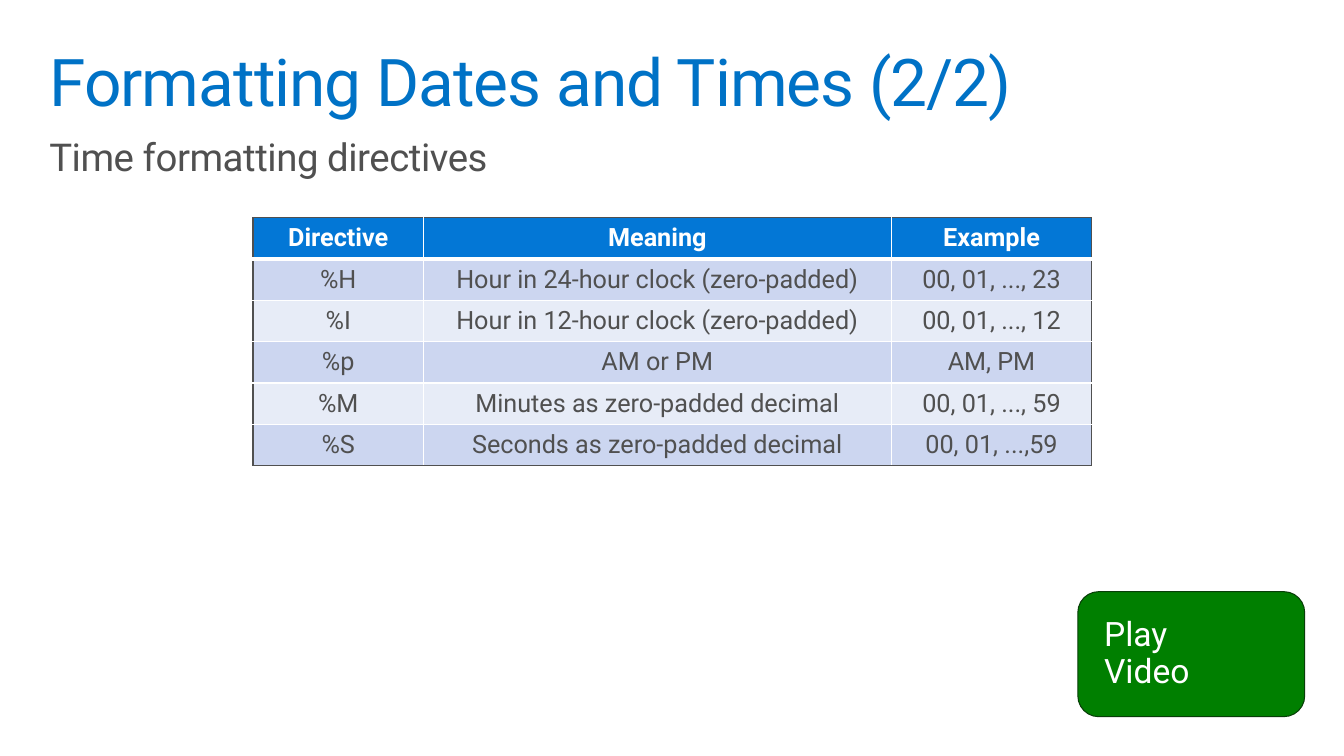
import pptx
import pptx.util
import pptx.dml.color
import pptx.enum.shapes
import pptx.enum.text
import pptx.oxml
import pptx.oxml.ns

Inches, Pt = pptx.util.Inches, pptx.util.Pt
RGBColor = pptx.dml.color.RGBColor
Align, Anchor = pptx.enum.text.PP_ALIGN, pptx.enum.text.MSO_ANCHOR

BLUE = RGBColor(0x00, 0x72, 0xC6)
HEAD = RGBColor(0x03, 0x77, 0xD6)
GRAY = RGBColor(0x50, 0x50, 0x50)
WHITE = RGBColor(0xFF, 0xFF, 0xFF)
DARK = RGBColor(0xCC, 0xD6, 0xF0)
LIGHT = RGBColor(0xE7, 0xEC, 0xF7)
GREEN = RGBColor(0x00, 0x7F, 0x00)
EDGE = RGBColor(0x08, 0x3E, 0x08)

ROWS = [
    ("Directive", "Meaning", "Example"),
    ("%H", "Hour in 24-hour clock (zero-padded)", "00, 01, ..., 23"),
    ("%I", "Hour in 12-hour clock (zero-padded)", "00, 01, ..., 12"),
    ("%p", "AM or PM", "AM, PM"),
    ("%M", "Minutes as zero-padded decimal", "00, 01, ..., 59"),
    ("%S", "Seconds as zero-padded decimal", "00, 01, ...,59"),
]
WIDTHS = (1.69, 4.64, 1.99)
ROW_H = 0.41


class Page:
    font = "Roboto"

    def __init__(self, slide):
        self.slide = slide

    def style(self, para, size, color, bold=False, track=0):
        """Format every run; track is letter spacing in points."""
        for run in para.runs:
            run.font.name = self.font
            run.font.size = Pt(size)
            run.font.bold = bold
            run.font.color.rgb = color
            if track:
                run.font._element.set("spc", str(round(track * 100)))

    def pad(self, frame, side, top):
        frame.margin_left = frame.margin_right = Inches(side)
        frame.margin_top = frame.margin_bottom = Inches(top)
        frame.word_wrap = True

    def text(self, text, top, size, color, track):
        box = self.slide.shapes.add_textbox(
            Inches(0.39), Inches(top), Inches(12.55), Inches(0.88))
        frame = box.text_frame
        self.pad(frame, 0.1, 0.1)
        frame.text = text
        para = frame.paragraphs[0]
        para.line_spacing = 0.9
        self.style(para, size, color, track=track)

    def button(self, text, left, top, width, height):
        shape = self.slide.shapes.add_shape(
            pptx.enum.shapes.MSO_SHAPE.ROUNDED_RECTANGLE,
            Inches(left), Inches(top), Inches(width), Inches(height))
        shape.shadow.inherit = False
        shape.fill.solid()
        shape.fill.fore_color.rgb = GREEN
        shape.line.color.rgb = EDGE
        shape.line.width = Pt(0.75)
        frame = shape.text_frame
        self.pad(frame, 0.2, 0.16)
        frame.vertical_anchor = Anchor.MIDDLE
        frame.text = text
        para = frame.paragraphs[0]
        para.alignment = Align.LEFT
        para.line_spacing = 0.9
        self.style(para, 24, WHITE)

    def border(self, cell, sides):
        """Draw (side, color, points) borders, given in L, R, T, B order."""
        props = cell._tc.get_or_add_tcPr()
        for spot, (side, color, points) in enumerate(sides):
            line = pptx.oxml.parse_xml(
                f'<a:ln{side} {pptx.oxml.ns.nsdecls("a")} w="{Pt(points)}">'
                f'<a:solidFill><a:srgbClr val="{color}"/></a:solidFill>'
                f'</a:ln{side}>')
            props.insert(spot, line)

    def cell(self, cell, text, fill, color, bold):
        cell.fill.solid()
        cell.fill.fore_color.rgb = fill
        cell.margin_left = cell.margin_right = Inches(0.3)
        cell.margin_top = cell.margin_bottom = 0
        cell.vertical_anchor = Anchor.MIDDLE
        cell.text = text
        para = cell.text_frame.paragraphs[0]
        para.alignment = Align.CENTER
        self.style(para, 18, color, bold)

    def table(self, rows, widths, left, top):
        grid = self.slide.shapes.add_table(
            len(rows), len(widths), Inches(left), Inches(top),
            Inches(sum(widths)), Inches(ROW_H * len(rows))).table
        for col, width in zip(grid.columns, widths):
            col.width = Inches(width)
        for r, row in enumerate(rows):
            grid.rows[r].height = Inches(ROW_H)
            head, last = r == 0, r == len(rows) - 1
            fill = HEAD if head else DARK if r % 2 else LIGHT
            for c, text in enumerate(row):
                cell = grid.cell(r, c)
                self.cell(cell, text, fill, WHITE if head else GRAY, head)
                self.border(cell, [
                    ("L", GRAY if c == 0 else WHITE, 1),
                    ("R", GRAY if c == len(row) - 1 else WHITE, 1),
                    ("T", GRAY if head else WHITE, 3 if r == 1 else 1),
                    ("B", GRAY if last else WHITE, 3 if head else 1),
                ])


def main():
    deck = pptx.Presentation()
    deck.slide_width, deck.slide_height = Inches(13.33), Inches(7.5)
    page = Page(deck.slides.add_slide(deck.slide_layouts[6]))
    page.text("Formatting Dates and Times (2/2)", 0.39, 47, BLUE, -0.7)
    page.text("Time formatting directives", 1.27, 27.4, GRAY, -0.3)
    page.button("Play\vVideo", 10.69, 5.87, 2.25, 1.24)
    page.table(ROWS, WIDTHS, 2.51, 2.16)
    deck.save("out.pptx")


if __name__ == "__main__":
    main()
